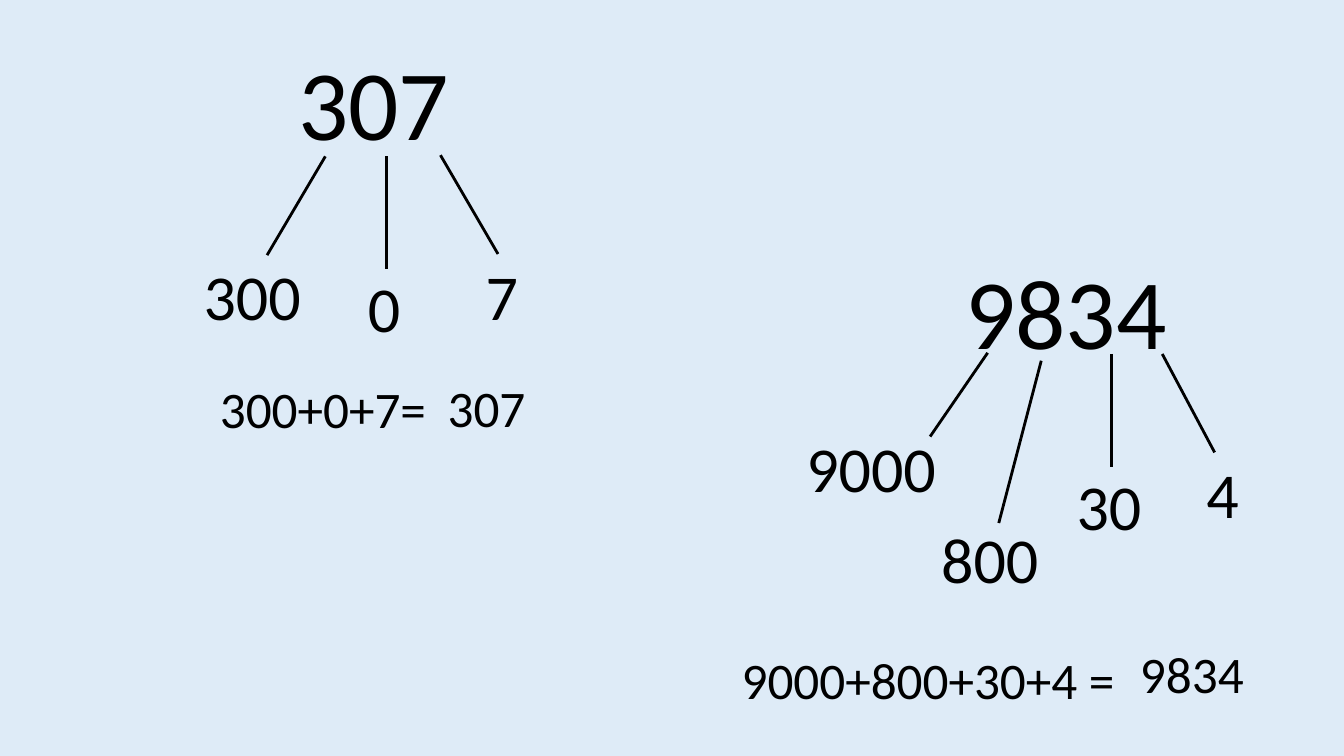
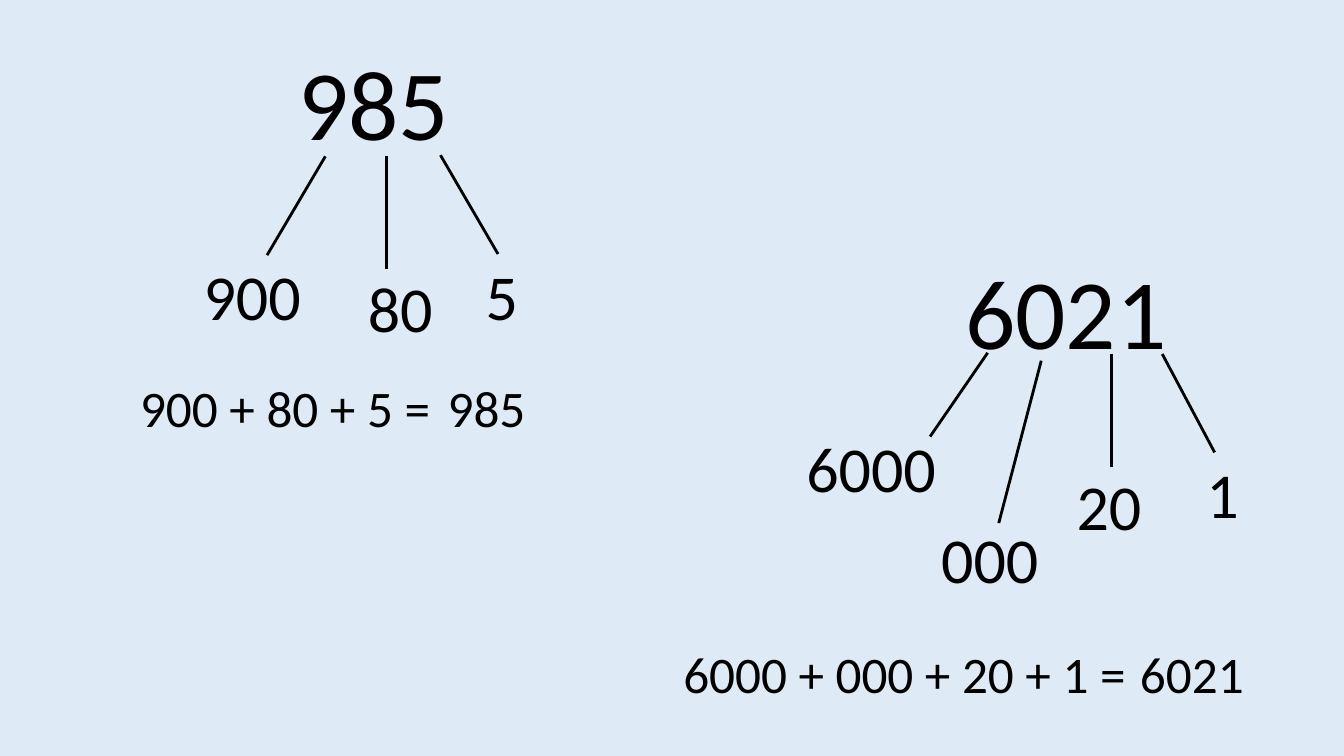
from dataclasses import dataclass
from typing import NamedTuple

from lxml.etree import SubElement
from pptx import Presentation
from pptx.dml.color import RGBColor
from pptx.enum.shapes import MSO_CONNECTOR as Conn
from pptx.enum.text import MSO_ANCHOR as Anchor, MSO_AUTO_SIZE as AutoSize
from pptx.oxml.ns import qn
from pptx.slide import Slide
from pptx.util import Cm, Pt


@dataclass(frozen=True)
class Theme:
    background: RGBColor = RGBColor(0xDE, 0xEB, 0xF7)
    ink: RGBColor = RGBColor(0, 0, 0)
    font: str = "Calibri"
    number_size: float = 71
    addend_size: float = 45.7
    sum_size: float = 36.6
    line_width: float = 2
    inset: float = 0.1


class Point(NamedTuple):
    x: float
    y: float


class Branch(NamedTuple):
    start: Point
    end: Point
    label: Point


class Tree(NamedTuple):
    number: Point
    branches: tuple[Branch, ...]
    total: Point


class Exercise(NamedTuple):
    tree: Tree
    number: str
    addends: tuple[str, ...]
    sum_text: str
    sum_at: Point


THEME = Theme()
CM_PER_PT = 2.54 / 72
LINE_HEIGHT = 1.22
DIGIT_WIDTH = 0.51
CHAR_WIDTHS = {" ": 0.23, "+": 0.5, "=": 0.5}

HUNDREDS = Tree(
    Point(7.42, 0.91),
    (
        Branch(Point(8.2, 3.94), Point(6.73, 6.43), Point(5.03, 6.35)),
        Branch(Point(9.73, 3.94), Point(9.73, 6.78), Point(9.17, 6.65)),
        Branch(Point(11.1, 3.91), Point(12.55, 6.4), Point(12.14, 6.35)),
    ),
    Point(11.18, 9.37),
)
THOUSANDS = Tree(
    Point(24.23, 6.17),
    (
        Branch(Point(24.89, 8.89), Point(23.44, 11), Point(20.22, 10.69)),
        Branch(Point(26.24, 9.09), Point(25.17, 13.18), Point(23.62, 12.98)),
        Branch(Point(28.02, 8.92), Point(28.02, 11.76), Point(27.03, 11.63)),
        Branch(Point(29.29, 8.92), Point(30.61, 11.4), Point(30.3, 11.33)),
    ),
    Point(28.63, 16.08),
)

SLIDES = (
    (
        Exercise(HUNDREDS, "307", ("300", "0", "7"), "300+0+7=", Point(5.44, 9.4)),
        Exercise(THOUSANDS, "9834", ("9000", "800", "30", "4"),
                 "9000+800+30+4 =", Point(18.59, 16.23)),
    ),
    (
        Exercise(HUNDREDS, "985", ("900", "80", "5"), "900 + 80 + 5 =", Point(3.43, 9.37)),
        Exercise(THOUSANDS, "6021", ("6000", "000", "20", "1"),
                 "6000 + 000 + 20 + 1 =", Point(17.12, 16.08)),
    ),
)


def add_text(s: Slide, text: str, at: Point, size: float) -> None:
    em = size * CM_PER_PT
    width = em * sum(CHAR_WIDTHS.get(c, DIGIT_WIDTH) for c in text) + 2 * THEME.inset
    height = em * LINE_HEIGHT + 2 * THEME.inset
    tf = s.shapes.add_textbox(Cm(at.x), Cm(at.y), Cm(width), Cm(height)).text_frame
    frame_format = {
        "word_wrap": False,
        "auto_size": AutoSize.SHAPE_TO_FIT_TEXT,
        "vertical_anchor": Anchor.MIDDLE,
        **{f"margin_{side}": Cm(THEME.inset) for side in ("left", "top", "right", "bottom")},
    }
    for name, value in frame_format.items():
        setattr(tf, name, value)
    r = tf.paragraphs[0].add_run()
    r.text = text
    for name, value in {"name": THEME.font, "size": Pt(size)}.items():
        setattr(r.font, name, value)
    r.font.color.rgb = THEME.ink


def add_line(s: Slide, start: Point, end: Point) -> None:
    line = s.shapes.add_connector(
        Conn.STRAIGHT, Cm(start.x), Cm(start.y), Cm(end.x), Cm(end.y)
    )
    line.line.color.rgb = THEME.ink
    line.line.width = Pt(THEME.line_width)
    SubElement(line.element.spPr, qn("a:effectLst"))


def add_exercise(s: Slide, exercise: Exercise) -> None:
    tree = exercise.tree
    add_text(s, exercise.number, tree.number, THEME.number_size)
    for branch, addend in zip(tree.branches, exercise.addends):
        add_line(s, branch.start, branch.end)
        add_text(s, addend, branch.label, THEME.addend_size)
    add_text(s, exercise.sum_text, exercise.sum_at, THEME.sum_size)
    add_text(s, exercise.number, tree.total, THEME.sum_size)


def main() -> None:
    prs = Presentation()
    prs.slide_width, prs.slide_height = Cm(33.87), Cm(19.05)
    fill = prs.slide_master.background.fill
    fill.solid()
    fill.fore_color.rgb = THEME.background
    for exercises in SLIDES:
        s = prs.slides.add_slide(prs.slide_layouts[6])
        for exercise in exercises:
            add_exercise(s, exercise)
    prs.save("out.pptx")


if __name__ == "__main__":
    main()
